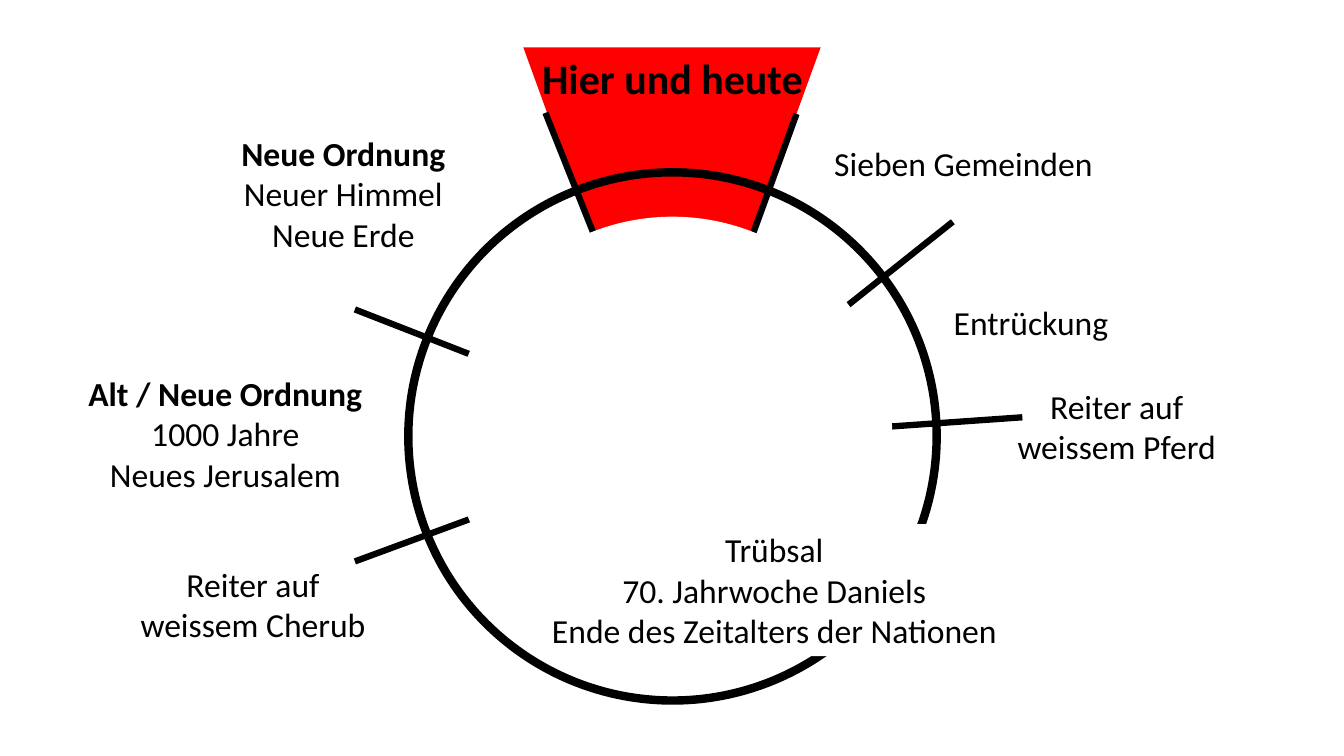
import pptx
import pptx.util
from lxml import etree
from pptx.dml.color import RGBColor
from pptx.enum.shapes import MSO_CONNECTOR, MSO_SHAPE
from pptx.enum.text import MSO_ANCHOR, PP_ALIGN
from pptx.oxml.ns import qn
from pptx.util import Inches, Pt

BLACK = RGBColor(0, 0, 0)
WHITE = RGBColor(255, 255, 255)
RED = RGBColor(255, 0, 0)

SLIDE_SIZE = (13.33, 7.5)
RING_CENTER = (6.67, 4.33)
RING_DIAMETER = 5.24
INNER_DISC_DIAMETER = 4.36
TODAY_WEDGE = (5.02, 0, 3.29, 3.56)
WEDGE_SLOPE = 0.393
TOP_COVER = (0, 0, 13.33, 0.47)

# Inner end, outer end of each dividing line
SPOKES = [
    ((6.71, 4.38), (5.41, 1.12)),
    ((6.71, 4.41), (7.9, 1.13)),
    ((6.71, 4.38), (9.45, 2.2)),
    ((6.71, 4.38), (10.14, 4.14)),
    ((6.75, 4.38), (3.52, 5.57)),
    ((6.75, 4.33), (3.52, 3.07)),
]

# Box, lines, number of bold lines, size, wrap, fill
LABELS = [
    ((5.26, 0.47, 2.82, 0.61), ["Hier und heute"], 1, 30, False, None),
    ((8.16, 1.37, 2.79, 0.5), ["Sieben Gemeinden"], 0, 24, False, None),
    ((9.35, 2.95, 1.75, 0.5), ["Entrückung"], 0, 24, False, None),
    ((9.98, 3.78, 2.19, 0.91), ["Reiter auf", "weissem Pferd"], 0, 24, False, None),
    ((5.35, 5.2, 4.66, 1.31),
     ["Trübsal", "70. Jahrwoche Daniels", "Ende des Zeitalters der Nationen"],
     0, 24, False, WHITE),
    ((1.28, 5.54, 2.46, 0.91), ["Reiter auf", "weissem Cherub"], 0, 24, False, None),
    ((0.76, 3.65, 2.95, 1.31),
     ["Alt / Neue Ordnung", "1000 Jahre", "Neues Jerusalem"], 1, 24, True, None),
    ((2.23, 1.27, 2.35, 1.31),
     ["Neue Ordnung", "Neuer Himmel", "Neue Erde"], 1, 24, True, None),
]


def set_attributes(target, values):
    for name, value in values.items():
        setattr(target, name, value)


def add_plain_shape(slide, kind, box, fill=None, line_width=None):
    """Add a shape without shadow; no fill or no line width leaves that part empty."""
    shape = slide.shapes.add_shape(kind, *map(Inches, box))
    shape.shadow.inherit = False
    if fill is None:
        shape.fill.background()
    else:
        shape.fill.solid()
        shape.fill.fore_color.rgb = fill
    if line_width is None:
        shape.line.fill.background()
    else:
        shape.line.color.rgb = BLACK
        shape.line.width = Pt(line_width)
    return shape


def centered_square(diameter):
    """Box of a circle around the ring's center."""
    left, top = (middle - diameter / 2 for middle in RING_CENTER)
    return left, top, diameter, diameter


def add_spoke(slide, inner, outer):
    spoke = slide.shapes.add_connector(
        MSO_CONNECTOR.STRAIGHT, *map(Inches, inner + outer))
    spoke.line.color.rgb = BLACK
    spoke.line.width = Pt(4.5)
    etree.SubElement(spoke._element.spPr, qn("a:effectLst"))


def add_label(slide, box, lines, bold_count, size, wrap, fill):
    label = slide.shapes.add_textbox(*map(Inches, box))
    if fill is not None:
        label.fill.solid()
        label.fill.fore_color.rgb = fill
    frame = label.text_frame
    set_attributes(frame, {"word_wrap": wrap, "vertical_anchor": MSO_ANCHOR.TOP})
    frame.text = "\n".join(lines)
    for index, paragraph in enumerate(frame.paragraphs):
        paragraph.alignment = PP_ALIGN.CENTER
        font = paragraph.runs[0].font
        set_attributes(font, {"name": "Calibri", "size": Pt(size),
                              "bold": index < bold_count})
        font.color.rgb = BLACK


def main():
    presentation = pptx.Presentation()
    width, height = map(Inches, SLIDE_SIZE)
    set_attributes(presentation, {"slide_width": width, "slide_height": height})
    slide = presentation.slides.add_slide(presentation.slide_layouts[6])

    wedge = add_plain_shape(slide, MSO_SHAPE.TRAPEZOID, TODAY_WEDGE, RED)
    wedge.rotation = 180
    wedge.adjustments[0] = WEDGE_SLOPE
    add_plain_shape(slide, MSO_SHAPE.OVAL, centered_square(RING_DIAMETER), line_width=6)
    for inner, outer in SPOKES:
        add_spoke(slide, inner, outer)
    add_plain_shape(slide, MSO_SHAPE.OVAL, centered_square(INNER_DISC_DIAMETER), WHITE)
    for label in LABELS:
        add_label(slide, *label)
    add_plain_shape(slide, MSO_SHAPE.RECTANGLE, TOP_COVER, WHITE)

    presentation.save("out.pptx")


if __name__ == "__main__":
    main()
